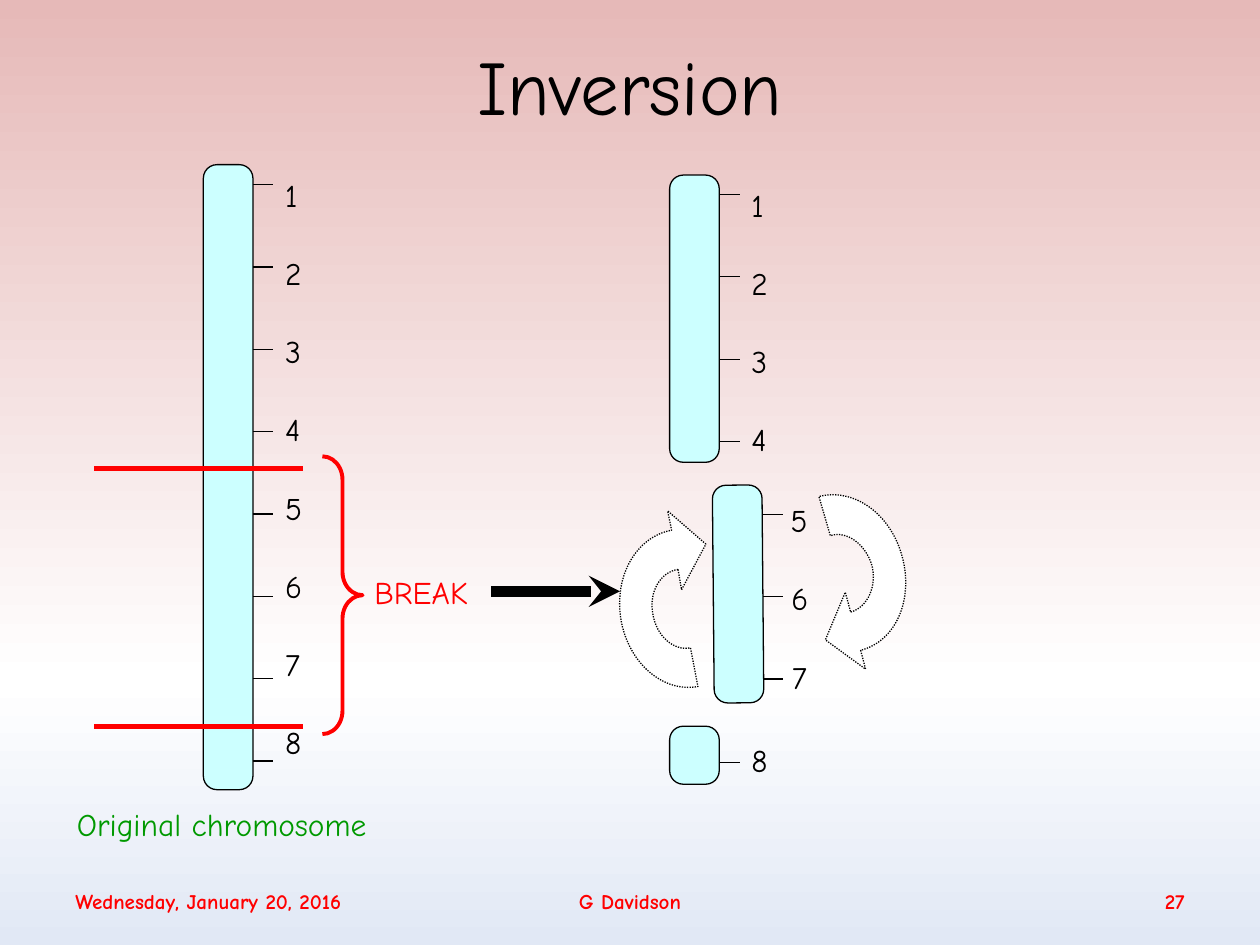
from dataclasses import dataclass

from lxml.etree import SubElement
from pptx import Presentation
from pptx.dml.color import RGBColor
from pptx.enum.dml import MSO_LINE
from pptx.enum.shapes import MSO_CONNECTOR, MSO_SHAPE
from pptx.enum.text import MSO_ANCHOR, MSO_AUTO_SIZE, PP_ALIGN
from pptx.oxml.ns import qn
from pptx.util import Cm, Pt

FONT = "Comic Neue"
BLACK = RGBColor(0x00, 0x00, 0x00)
WHITE = RGBColor(0xFF, 0xFF, 0xFF)
RED = RGBColor(0xFF, 0x00, 0x00)
GREEN = RGBColor(0x00, 0x99, 0x00)
CYAN = RGBColor(0xCC, 0xFF, 0xFF)
PINK = RGBColor(0xE6, 0xB9, 0xB8)
PALE_BLUE = RGBColor(0xE1, 0xE8, 0xF5)

PIECE_WIDTH = 1.0
TICK_LENGTH = 0.41
TICK_PITCH = 1.66


@dataclass
class Chromosome:
    left: float
    top: float
    height: float
    first_tick: float
    genes: str
    label_top: float
    label_height: float
    label_offset: float = 1.4
    rotation: float = 0


@dataclass
class TurnArrow:
    start: tuple
    segments: list


CHROMOSOMES = [
    Chromosome(4.1, 3.32, 12.6, 3.72, "12345678", 2.93, 13.0),
    Chromosome(13.5, 3.53, 5.79, 3.92, "1234", 3.13, 6.43),
    Chromosome(14.38, 9.78, 4.39, 10.37, "567", 9.48, 4.8, 1.32, 359.5),
    Chromosome(13.5, 14.64, 1.17, 15.37, "8", 14.32, 1.52),
]

TURN_ARROWS = [
    TurnArrow((13.67, 11.48), [
        (13.31, 11.53, 13.08, 11.94, 13.16, 12.37),
        (13.23, 12.83, 13.59, 13.13, 13.92, 13.06),
        (14.07, 13.84),
        (13.36, 13.97, 12.67, 13.36, 12.52, 12.5),
        (12.37, 11.61, 12.83, 10.82, 13.54, 10.69),
        (13.46, 10.3), (14.23, 10.97), (13.74, 11.89),
    ]),
    TurnArrow((17.15, 12.34), [
        (17.5, 12.24, 17.68, 11.81, 17.58, 11.4),
        (17.45, 10.97, 17.07, 10.69, 16.74, 10.8),
        (16.51, 10.01),
        (17.22, 9.83, 17.96, 10.36, 18.19, 11.23),
        (18.42, 12.09, 18.06, 12.93, 17.35, 13.11),
        (17.45, 13.49), (16.64, 12.9), (17.04, 11.94),
    ]),
]


def paint_background(page) -> None:
    fill = page.background.fill
    fill.gradient()
    fill.gradient_angle = 270
    stops = page.background._cSld.find(".//" + qn("a:gsLst"))
    for stop in list(stops):
        stops.remove(stop)
    for percent, color in ((0, PINK), (72, WHITE), (100, PALE_BLUE)):
        stop = SubElement(stops, qn("a:gs"), pos=str(percent * 1000))
        SubElement(stop, qn("a:srgbClr"), val=str(color))


def add_text(page, text: str, left: float, top: float, width: float,
             height: float, *, size: float = 18, color: RGBColor = BLACK,
             bold: bool = False, align=PP_ALIGN.LEFT, anchor=MSO_ANCHOR.TOP,
             grow: bool = False, line_spacing: float = 1.0,
             space_percent: int = 0, rotation: float = 0) -> None:
    box = page.shapes.add_textbox(Cm(left), Cm(top), Cm(width), Cm(height))
    box.rotation = rotation
    frame = box.text_frame
    frame.word_wrap = True
    frame.vertical_anchor = anchor
    frame.auto_size = MSO_AUTO_SIZE.SHAPE_TO_FIT_TEXT if grow else MSO_AUTO_SIZE.NONE
    frame.text = text
    for para in frame.paragraphs:
        para.alignment = align
        para.line_spacing = line_spacing
        para.space_before = Pt(0)
        if space_percent:
            before = para._p.pPr.find(qn("a:spcBef"))
            before.remove(before[0])
            SubElement(before, qn("a:spcPct"), val=str(space_percent * 1000))
        for span in para.runs:
            span.font.name = FONT
            span.font.size = Pt(size)
            span.font.bold = bold
            span.font.color.rgb = color


def add_line(page, start: tuple, end: tuple, color: RGBColor = BLACK,
             width: float = 0.75, arrow: bool = False) -> None:
    line = page.shapes.add_connector(
        MSO_CONNECTOR.STRAIGHT, *(Cm(value) for value in start + end))
    line.line.color.rgb = color
    line.line.width = Pt(width)
    if arrow:
        SubElement(line.line._get_or_add_ln(), qn("a:tailEnd"), type="stealth")
    SubElement(line._element.spPr, qn("a:effectLst"))


def outline(shape, color: RGBColor = BLACK, width: float = 0.75) -> None:
    shape.shadow.inherit = False
    shape.line.color.rgb = color
    shape.line.width = Pt(width)


def add_chromosome(page, piece: Chromosome) -> None:
    body = page.shapes.add_shape(
        MSO_SHAPE.ROUNDED_RECTANGLE, Cm(piece.left), Cm(piece.top),
        Cm(PIECE_WIDTH), Cm(piece.height))
    body.adjustments[0] = 0.274
    body.rotation = piece.rotation
    body.fill.solid()
    body.fill.fore_color.rgb = CYAN
    outline(body)
    edge = piece.left + PIECE_WIDTH
    for index in range(len(piece.genes)):
        level = piece.first_tick + index * TICK_PITCH
        add_line(page, (edge, level), (edge + TICK_LENGTH, level))
    add_text(page, "\n".join(piece.genes), piece.left + piece.label_offset,
             piece.label_top, 1.8, piece.label_height, grow=True,
             line_spacing=1.65, space_percent=50, rotation=piece.rotation)


def add_turn_arrow(page, arrow: TurnArrow) -> None:
    builder = page.shapes.build_freeform(*(Cm(value) for value in arrow.start))
    builder.add_line_segments(
        [(Cm(segment[-2]), Cm(segment[-1])) for segment in arrow.segments], close=True)
    shape = builder.convert_to_shape()
    sides = shape._element.findall(".//" + qn("a:lnTo"))
    for side, segment in zip(sides, arrow.segments):
        if len(segment) == 6:
            side.tag = qn("a:cubicBezTo")
            side.remove(side[0])
            for x, y in zip(segment[::2], segment[1::2]):
                SubElement(side, qn("a:pt"), x=str(Cm(x) - shape.left),
                           y=str(Cm(y) - shape.top))
    shape.fill.solid()
    shape.fill.fore_color.rgb = WHITE
    outline(shape)
    shape.line.dash_style = MSO_LINE.ROUND_DOT


def main() -> None:
    deck = Presentation()
    deck.slide_width, deck.slide_height = Cm(25.4), Cm(19.05)
    page = deck.slides.add_slide(deck.slide_layouts[6])
    paint_background(page)

    for text, left, width, align in (
        ("Wednesday, January 20, 2016", 1.27, 8.43, PP_ALIGN.LEFT),
        ("G Davidson", 8.68, 8.04, PP_ALIGN.CENTER),
        ("27", 18.2, 5.93, PP_ALIGN.RIGHT),
    ):
        add_text(page, text, left, 17.65, width, 1.02, size=12, color=RED,
                 bold=True, align=align, anchor=MSO_ANCHOR.MIDDLE)
    add_text(page, "Inversion", 1.27, 0.12, 22.86, 3.18, size=44,
             align=PP_ALIGN.CENTER, anchor=MSO_ANCHOR.MIDDLE)

    for piece in CHROMOSOMES:
        add_chromosome(page, piece)
    for level in (9.45, 14.65):
        add_line(page, (1.9, level), (6.1, level), RED, 3)

    brace = page.shapes.add_shape(
        MSO_SHAPE.RIGHT_BRACE, Cm(6.5), Cm(9.2), Cm(0.81), Cm(5.6))
    brace.adjustments[0] = 0.582
    brace.fill.background()
    outline(brace, RED, 2.25)

    add_text(page, "BREAK", 7.3, 11.43, 3.0, 1.02, color=RED,
             grow=True, space_percent=50)
    add_text(page, "Original chromosome", 1.3, 16.1, 7.59, 1.02, color=GREEN,
             grow=True, space_percent=50)
    add_line(page, (9.9, 11.92), (12.5, 11.92), width=6, arrow=True)
    for arrow in TURN_ARROWS:
        add_turn_arrow(page, arrow)

    deck.save("out.pptx")


if __name__ == "__main__":
    main()
